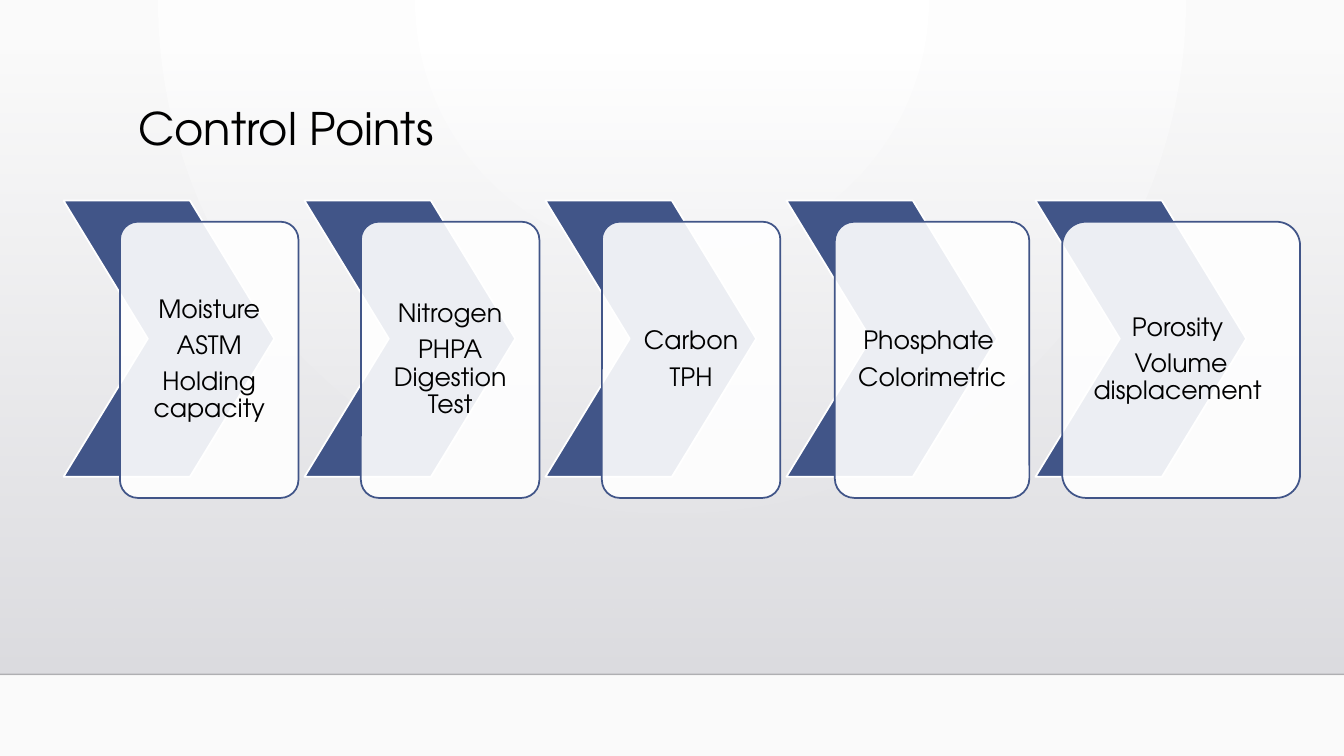
from dataclasses import dataclass

from lxml import etree
from pptx import Presentation
from pptx.dml.color import RGBColor
from pptx.enum import shapes, text
from pptx.oxml.ns import qn
from pptx.util import Inches, Pt


@dataclass(frozen=True)
class Theme:
    font: str = "TeX Gyre Adventor"
    title_size: int = 32
    card_size: int = 18
    ink: str = "000000"
    accent: str = "415588"
    paper: str = "FFFFFF"
    paper_edge: str = "FAFAFA"
    wall_top: str = "DCDCE0"
    wall_bottom: str = "DEDEE2"
    floor_line: str = "000001"


@dataclass(frozen=True)
class ControlPoint:
    lines: tuple[str, ...]
    card_width: float = 1.77


THEME = Theme()
SLIDE_W, SLIDE_H = 13.33, 7.5
WALL_TOP, FLOOR_TOP = 0.51, 6.69

CHEVRON_LEFT, CHEVRON_TOP, CHEVRON_W = 0.63, 1.99, 2.09
CARD_TOP, CARD_SHIFT, GAP = 2.2, 0.4, 0.06
STEP_H = 2.74

CONTROL_POINTS = (
    ControlPoint(("Moisture", "ASTM", "Holding capacity")),
    ControlPoint(("Nitrogen", "PHPA Digestion Test")),
    ControlPoint(("Carbon", "TPH")),
    ControlPoint(("Phosphate ", "Colorimetric"), 1.93),
    ControlPoint(("Porosity ", "Volume displacement "), 2.36),
)


def rgb(color: str) -> RGBColor:
    return RGBColor.from_string(color)


def set_opacity(color_parent, percent: int) -> None:
    """Give the first RGB colour under an element an opacity."""
    color = next(color_parent.iter(qn("a:srgbClr")))
    etree.SubElement(color, qn("a:alpha")).set("val", str(percent * 1000))


def set_gradient(fill, owner, colors: tuple[str, str]):
    """Apply a two-colour gradient and return its XML element."""
    fill.gradient()
    for stop, color in zip(fill.gradient_stops, colors):
        stop.color.rgb = rgb(color)
    grad = next(owner.iter(qn("a:gradFill")))
    for stop, position in zip(fill.gradient_stops, (0, 1)):
        stop.position = position
    return grad


def set_font(p, size: int) -> None:
    p.line_spacing = 0.9
    p.font.name = THEME.font
    p.font.size = Pt(size)
    p.font.color.rgb = rgb(THEME.ink)


def add_backdrop(slide) -> None:
    grad = set_gradient(slide.background.fill, slide.element,
                        (THEME.paper, THEME.paper_edge))
    grad.remove(grad.find(qn("a:lin")))
    glow = etree.SubElement(grad, qn("a:path"), attrib={"path": "circle"})
    etree.SubElement(glow, qn("a:fillToRect"),
                     l="43000", t="0", r="43000", b="100000")

    wall = slide.shapes.add_shape(
        shapes.MSO_SHAPE.RECTANGLE, 0, Inches(WALL_TOP),
        Inches(SLIDE_W), Inches(FLOOR_TOP - WALL_TOP))
    wall.shadow.inherit = False
    wall.line.fill.background()
    grad = set_gradient(wall.fill, wall.element,
                        (THEME.wall_top, THEME.wall_bottom))
    grad.find(qn("a:lin")).set("ang", "5400000")
    set_opacity(grad, 0)

    floor = slide.shapes.add_connector(
        shapes.MSO_CONNECTOR.STRAIGHT, 0, Inches(FLOOR_TOP),
        Inches(SLIDE_W), Inches(FLOOR_TOP))
    floor.line.width = Pt(1)
    floor.line.color.rgb = rgb(THEME.floor_line)
    set_opacity(floor.element, 20)
    etree.SubElement(floor.element.spPr, qn("a:effectLst"))


def add_panel(slide, kind, left: float, top: float, width: float,
              adjustment: float, fill: str, line: str):
    sp = slide.shapes.add_shape(kind, Inches(left), Inches(top),
                                Inches(width), Inches(STEP_H))
    sp.adjustments[0] = adjustment
    sp.shadow.inherit = False
    sp.fill.solid()
    sp.fill.fore_color.rgb = rgb(fill)
    sp.line.color.rgb = rgb(line)
    sp.line.width = Pt(1.25)
    return sp


def add_control_point(slide, point: ControlPoint, left: float) -> float:
    """Draw a chevron with its card and return the card's right edge."""
    add_panel(slide, shapes.MSO_SHAPE.CHEVRON, left, CHEVRON_TOP, CHEVRON_W,
              0.4, THEME.accent, THEME.paper)
    card_left = left + CHEVRON_W / 2 + CARD_SHIFT - point.card_width / 2
    card = add_panel(slide, shapes.MSO_SHAPE.ROUNDED_RECTANGLE, card_left,
                     CARD_TOP, point.card_width, 0.1,
                     THEME.paper, THEME.accent)
    set_opacity(card.element, 90)

    tf = card.text_frame
    tf.word_wrap = True
    tf.vertical_anchor = text.MSO_ANCHOR.MIDDLE
    tf.margin_left = tf.margin_right = Inches(0.14)
    tf.margin_top = tf.margin_bottom = Inches(0.14)
    tf.text = "\n".join(point.lines)
    for p in tf.paragraphs:
        p.alignment = text.PP_ALIGN.CENTER
        p.space_after = Pt(0.35 * THEME.card_size)
        set_font(p, THEME.card_size)
    return card_left + point.card_width


def add_title(slide, title: str) -> None:
    sp = slide.shapes.title
    sp.left, sp.top = Inches(1.27), Inches(1.01)
    sp.width, sp.height = Inches(10.5), Inches(1.15)
    tf = sp.text_frame
    tf.text = title
    tf.vertical_anchor = text.MSO_ANCHOR.TOP
    p = tf.paragraphs[0]
    p.alignment = text.PP_ALIGN.LEFT
    set_font(p, THEME.title_size)
    sp.element.getparent().append(sp.element)


def main() -> None:
    prs = Presentation()
    prs.slide_width, prs.slide_height = Inches(SLIDE_W), Inches(SLIDE_H)
    slide = prs.slides.add_slide(prs.slide_layouts.get_by_name("Title Only"))
    add_backdrop(slide)
    left = CHEVRON_LEFT
    for point in CONTROL_POINTS:
        left = add_control_point(slide, point, left) + GAP
    add_title(slide, "Control Points")
    prs.save("out.pptx")


if __name__ == "__main__":
    main()
